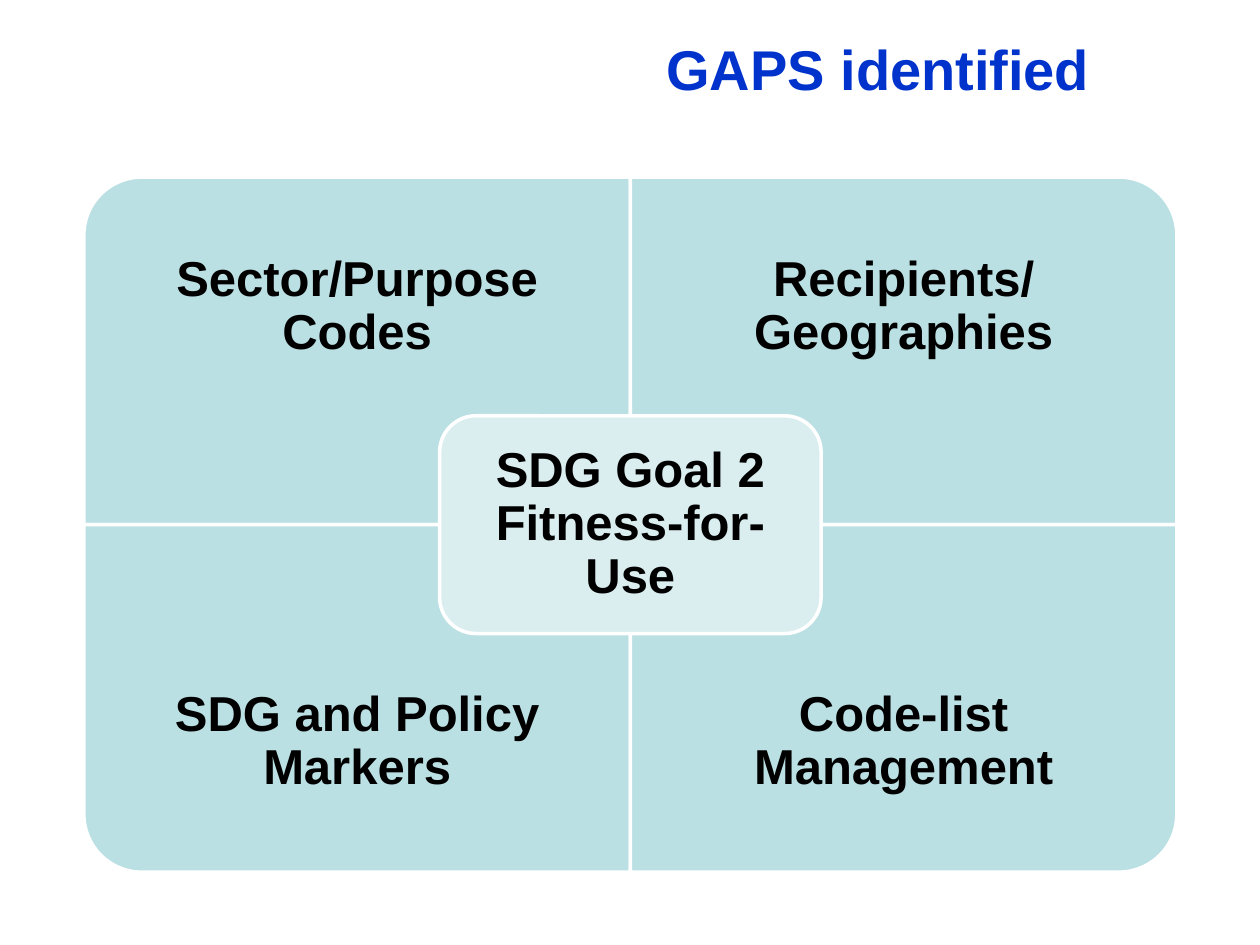
"""Build the slide of gaps around SDG Goal 2 as a four-part matrix."""
from pptx import Presentation
from pptx.dml.color import RGBColor
from pptx.enum.shapes import MSO_SHAPE
from pptx.enum.text import MSO_ANCHOR, PP_ALIGN
from pptx.util import Pt

ROUND_ONE = MSO_SHAPE.ROUND_1_RECTANGLE
ROUND_ALL = MSO_SHAPE.ROUNDED_RECTANGLE
MIDDLE = MSO_ANCHOR.MIDDLE
CENTER = PP_ALIGN.CENTER

BLUE = RGBColor(0x00, 0x33, 0xCC)
BLACK = RGBColor(0x00, 0x00, 0x00)
WHITE = RGBColor(0xFF, 0xFF, 0xFF)
TEAL = RGBColor(0xBB, 0xE0, 0xE3)
PALE = RGBColor(0xDA, 0xED, 0xEF)

MID_X, MID_Y = 360.2, 299.8
QUAD_W, QUAD_H = 312.3, 198.6
LABEL_H = QUAD_H * 0.75
CORE_W, CORE_H = 218, 124.4
CORE_PAD = 6

QUADRANTS = [
    ("Sector/Purpose Codes", -1, -1, 270),
    ("Recipients/ Geographies", 1, -1, 0),
    ("SDG and Policy Markers", -1, 1, 180),
    ("Code-list Management", 1, 1, 90),
]


def add_text(s, text, cx, cy, w, h, size=28, color=BLACK, inset=15.7,
             line=0.9, after=12):
    """Add a bold centred text box around the point (cx, cy)."""
    tf = s.shapes.add_textbox(Pt(cx - w / 2), Pt(cy - h / 2), Pt(w), Pt(h)).text_frame
    tf.word_wrap = True
    tf.vertical_anchor = MIDDLE
    tf.margin_left = tf.margin_right = tf.margin_top = tf.margin_bottom = Pt(inset)
    p = tf.paragraphs[0]
    p.alignment = CENTER
    p.line_spacing = line
    p.space_after = Pt(after)
    r = p.add_run()
    r.text = text
    r.font.name = "Arial"
    r.font.size = Pt(size)
    r.font.bold = True
    r.font.color.rgb = color


def add_panel(s, kind, cx, cy, w, h, fill, rotation=0):
    """Add a white-edged panel around (cx, cy) that covers w by h once turned."""
    if rotation % 180:
        w, h = h, w
    sp = s.shapes.add_shape(kind, Pt(cx - w / 2), Pt(cy - h / 2), Pt(w), Pt(h))
    sp.rotation = rotation
    sp.shadow.inherit = False
    sp.fill.solid()
    sp.fill.fore_color.rgb = fill
    sp.line.color.rgb = WHITE
    sp.line.width = Pt(2)


def add_quadrant(s, text, dx, dy, rotation):
    """Add one quadrant with its label in the outer three quarters."""
    cx = MID_X + dx * QUAD_W / 2
    add_panel(s, ROUND_ONE, cx, MID_Y + dy * QUAD_H / 2, QUAD_W, QUAD_H, TEAL, rotation)
    add_text(s, text, cx, MID_Y + dy * (QUAD_H - LABEL_H / 2), QUAD_W, LABEL_H)


def add_core(s, text):
    """Add the central panel and its label."""
    add_panel(s, ROUND_ALL, MID_X, MID_Y, CORE_W, CORE_H, PALE)
    add_text(s, text, MID_X, MID_Y, CORE_W - 2 * CORE_PAD, CORE_H - 2 * CORE_PAD,
             inset=8.4)


def main():
    """Build and save the presentation."""
    prs = Presentation()
    prs.slide_width, prs.slide_height = Pt(720), Pt(540)
    s = prs.slides.add_slide(prs.slide_layouts[6])
    s.background.fill.solid()
    s.background.fill.fore_color.rgb = WHITE
    add_text(s, "GAPS identified", 501.8, 38.9, 442, 46, size=32, color=BLUE,
             inset=3.6, line=1.0, after=0)
    for quadrant in QUADRANTS:
        add_quadrant(s, *quadrant)
    add_core(s, "SDG Goal 2 Fitness-for-Use")
    prs.save("out.pptx")


if __name__ == "__main__":
    main()
